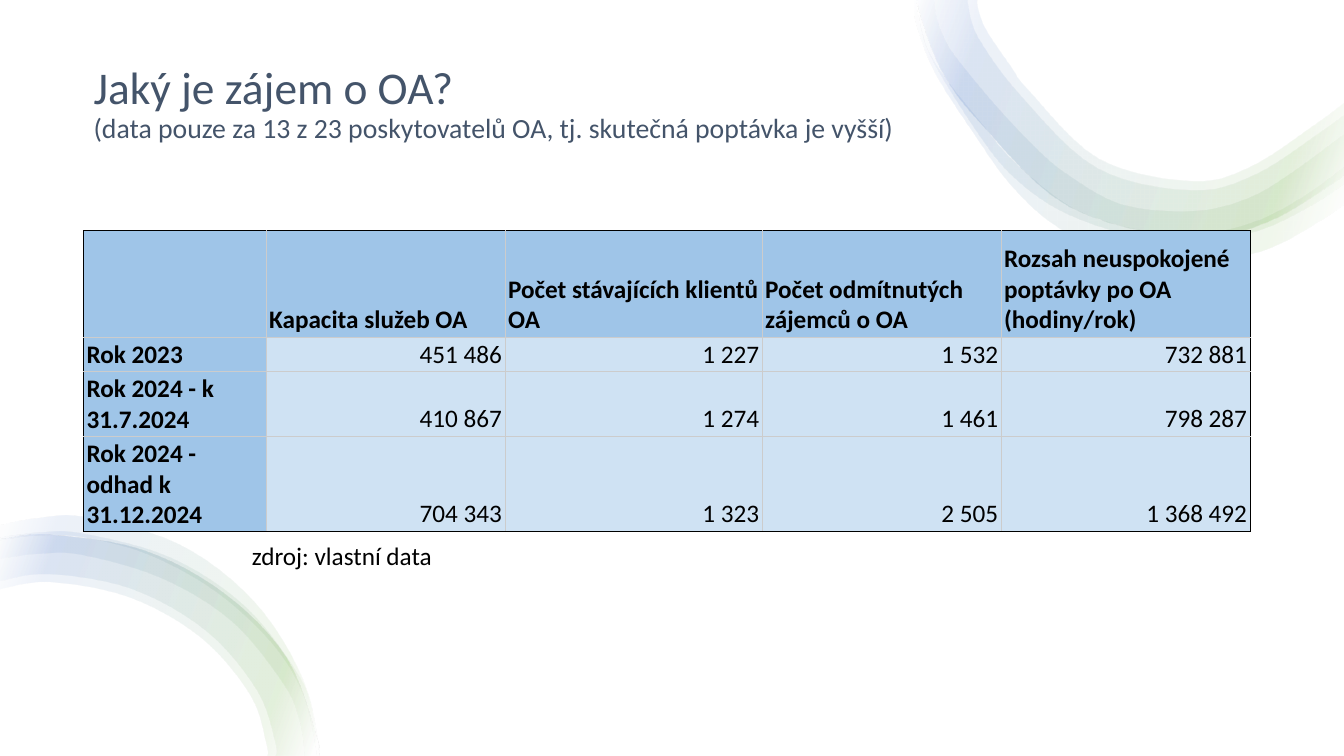
from lxml.etree import SubElement
from pptx import Presentation
from pptx.dml.color import RGBColor
from pptx.enum.text import MSO_ANCHOR, PP_ALIGN
from pptx.oxml import parse_xml
from pptx.oxml.ns import nsdecls, qn
from pptx.util import Inches, Pt

COLS, ROWS = 133.3, 75
STOPS = ((2, "FFFFFF"), (16, "70AD47"), (85, "4472C4"), (100, "FFFFFF"))

TOP = [(91.1, 0), (91.1, 0.7), (93.3, 6.75), (97.3, 12.2), (106, 20.4),
       (118.1, 23.5), (125.7, 21.9), (132.1, 18.1), (133.3, 17.1)]
LOW = [(31.6, 75), (31.4, 73.2), (28.4, 65.3), (22.2, 58.9), (14.1, 54.6),
       (4.9, 53.1), (0.4, 53.5), (0, 53.6)]
BANDS = [
    ([(90.7, 0), (90.9, 2.5), (92.8, 7.4), (97, 13.9), (100.1, 18.2),
      (104.1, 22), (109.1, 24.6), (114.7, 25.9), (120.5, 25.9),
      (126.1, 24.5), (131, 21.8), (133.3, 20.2)],
     [(133.3, 16.5), (129.3, 19.4), (124.8, 21.8), (120.1, 23), (115, 23),
      (110.1, 22.1), (105.5, 20.1), (100.3, 15.8), (97.3, 12.2), (94, 8.1),
      (92, 4.9), (91, 1.2), (91, 0)]),
    ([(91.1, 0), (91.5, 3.4), (93, 6.9), (97, 13.2), (100.2, 17.2),
      (104.4, 20.4), (109.4, 22.5), (114.7, 23.7), (120.2, 23.8),
      (125.5, 22.5), (130.3, 20.1), (133.3, 18.1)],
     [(133.3, 13.2), (128.1, 17), (124.1, 19.4), (119.7, 20.7), (115, 20.8),
      (110.4, 19.9), (105.8, 17.2), (102.9, 14.8), (98.8, 10.5),
      (94.9, 5.8), (93.7, 3.9), (92.9, 1.8), (92.7, 0)]),
    (TOP, [(133.3, 11.3), (130.8, 13.1), (124.4, 17.25), (118.1, 18.8),
           (108.8, 16.6), (101.3, 9.5), (97.1, 3.8), (96.1, 0.7), (96, 0)]),
    (TOP, [(133.3, 10.1), (130.2, 12.4), (123.9, 16.5), (118.1, 17.9),
           (109, 15.7), (102.1, 9), (100.3, 6.6), (97.8, 2.9), (97, 0.6),
           (97, 0)]),
    (LOW, [(0, 58.5), (4.9, 57.8), (12.8, 59.3), (19.9, 63.3), (24.8, 69),
           (26.4, 73.9), (26.5, 75)]),
    (LOW, [(0, 57.7), (4.9, 57), (13.1, 58.5), (20.5, 62.7), (25.5, 68.6),
           (27.3, 73.8), (27.3, 75)]),
    ([(31.6, 75), (31.1, 71.2), (29.7, 67.2), (24.4, 60.3), (17, 55.4),
      (8.3, 53), (3.8, 52.9), (0, 53.4)],
     [(0, 55.5), (3.9, 55), (8.1, 55.1), (16, 57.4), (23, 61.7),
      (28.1, 67.9), (29.7, 71.6), (30.2, 75)]),
    ([(31.7, 75), (30, 67.4), (25.2, 59.7), (17.8, 54), (8.6, 51.3),
      (3.7, 51.4), (0, 52.1)],
     [(0, 53.6), (3.9, 53.1), (8.3, 53.3), (14.7, 55), (21.4, 58.7),
      (27, 63.9), (30.1, 69.1), (31.4, 75)]),
]

DATA = [
    ["", "Kapacita služeb OA", "Počet stávajících klientů OA",
     "Počet odmítnutých zájemců o OA",
     "Rozsah neuspokojené poptávky po OA (hodiny/rok)"],
    ["Rok 2023", "451 486", "1 227", "1 532", "732 881"],
    ["Rok 2024 - k 31.7.2024", "410 867", "1 274", "1 461", "798 287"],
    ["Rok 2024 - odhad k 31.12.2024", "704 343", "1 323", "2 505",
     "1 368 492"],
]


def color(code):
    """Turn a hex string into a colour."""
    return RGBColor.from_string(code)


def unit(count):
    """Turn grid cells into a length."""
    return Inches(count / 10)


def smooth(knots, steps=6):
    """Sample a Catmull-Rom curve through the knots."""
    ends = [knots[0], *knots, knots[-1]]
    curve = [knots[0]]
    for a, b, c, d in zip(ends, ends[1:], ends[2:], ends[3:]):
        for step in range(1, steps + 1):
            t = step / steps
            curve.append(tuple(
                q + t / 2 * (r - p + t * (2 * p - 5 * q + 4 * r - s
                                          + t * (3 * (q - r) + s - p)))
                for p, q, r, s in zip(a, b, c, d)))
    return curve


class Deck:
    """Hold the style and the current slide."""

    font, ink, head, body = "Calibri", "000000", "9FC5E8", "CFE2F3"
    rule, title, size = "CCCCCC", "44546A", 18

    def __init__(self):
        """Open a blank slide."""
        self.file = Presentation()
        self.file.slide_width, self.file.slide_height = unit(COLS), unit(ROWS)
        self.slide = self.file.slides.add_slide(self.file.slide_layouts[6])
        self.items = self.slide.shapes

    def style(self, para, tone, size=None, bold=False):
        """Set the font of a paragraph."""
        para.font.name, para.font.bold = self.font, bold
        para.font.color.rgb = color(tone)
        if size:
            para.font.size = Pt(size)

    def band(self, outer, inner):
        """Draw a pale ribbon between two edges."""
        dots = [(unit(x), unit(y)) for x, y in smooth(outer) + smooth(inner)]
        pen = self.items.build_freeform(*dots[0])
        pen.add_line_segments(dots[1:], close=True)
        shape = pen.convert_to_shape()
        shape.shadow.inherit = False
        shape.line.fill.background()
        stops = "".join(
            f'<a:gs pos="{pos * 1000}"><a:srgbClr val="{tone}">'
            '<a:alpha val="10000"/></a:srgbClr></a:gs>' for pos, tone in STOPS)
        shape.element.spPr.find(qn("a:custGeom")).addnext(parse_xml(
            f'<a:gradFill {nsdecls("a")}><a:gsLst>{stops}</a:gsLst>'
            f'<a:lin ang="{200 * 60000}" scaled="0"/></a:gradFill>'))

    def text(self, box, lines, tone, wrap=True, anchor=MSO_ANCHOR.TOP):
        """Write lines of given sizes in one paragraph."""
        frame = self.items.add_textbox(*map(unit, box)).text_frame
        frame.word_wrap, frame.vertical_anchor = wrap, anchor
        para = frame.paragraphs[0]
        self.style(para, tone)
        for index, (words, size) in enumerate(lines):
            if index:
                para.line_spacing = 0.9
                para.add_line_break()
            run = para.add_run()
            run.text, run.font.size = words, Pt(size)

    def edge(self, cell, side, tone):
        """Draw one border of a cell."""
        line = SubElement(cell._tc.get_or_add_tcPr(), qn(f"a:ln{side}"),
                          w=str(Pt(0.75)))
        SubElement(SubElement(line, qn("a:solidFill")), qn("a:srgbClr"),
                   val=tone)

    def table(self, left, top, wide, high, data):
        """Build the framed table with header row and column."""
        table = self.items.add_table(
            len(high), len(wide), unit(left), unit(top),
            unit(sum(wide)), unit(sum(high))).table
        table.first_row = table.horz_banding = False
        for col, width in zip(table.columns, wide):
            col.width = unit(width)
        for row, height in zip(table.rows, high):
            row.height = unit(height)
        for r, row in enumerate(data):
            for c, words in enumerate(row):
                cell = table.cell(r, c)
                cell.margin_left = cell.margin_right = unit(0.3)
                cell.margin_top = cell.margin_bottom = unit(0.2)
                cell.vertical_anchor = MSO_ANCHOR.BOTTOM
                outer = {"L": c == 0, "R": c == len(wide) - 1,
                         "T": r == 0, "B": r == len(high) - 1}
                for side, frame in outer.items():
                    self.edge(cell, side, self.ink if frame else self.rule)
                key = r == 0 or c == 0
                cell.fill.solid()
                cell.fill.fore_color.rgb = color(
                    self.head if key else self.body)
                cell.text = words
                para = cell.text_frame.paragraphs[0]
                para.alignment = PP_ALIGN.LEFT if key else PP_ALIGN.RIGHT
                self.style(para, self.ink, self.size, key)


def main():
    """Build and save the slide."""
    deck = Deck()
    for outer, inner in BANDS:
        deck.band(outer, inner)
    deck.text((8.3, 8.1, 83.8, 6.7), [
        ("Jaký je zájem o OA?", 32.4),
        ("(data pouze za 13 z 23 poskytovatelů OA, "
         "tj. skutečná poptávka je vyšší)", 19.8)],
        deck.title, anchor=MSO_ANCHOR.BOTTOM)
    deck.table(8.3, 22.9, (18.1, 23.7, 25.5, 23.7, 24.7),
               (10.6, 3.2, 6.1, 7.6), DATA)
    deck.text((24, 53.1, 20.1, 4), [("zdroj: vlastní data", deck.size)],
              deck.ink, wrap=False)
    deck.file.save("out.pptx")


if __name__ == "__main__":
    main()
